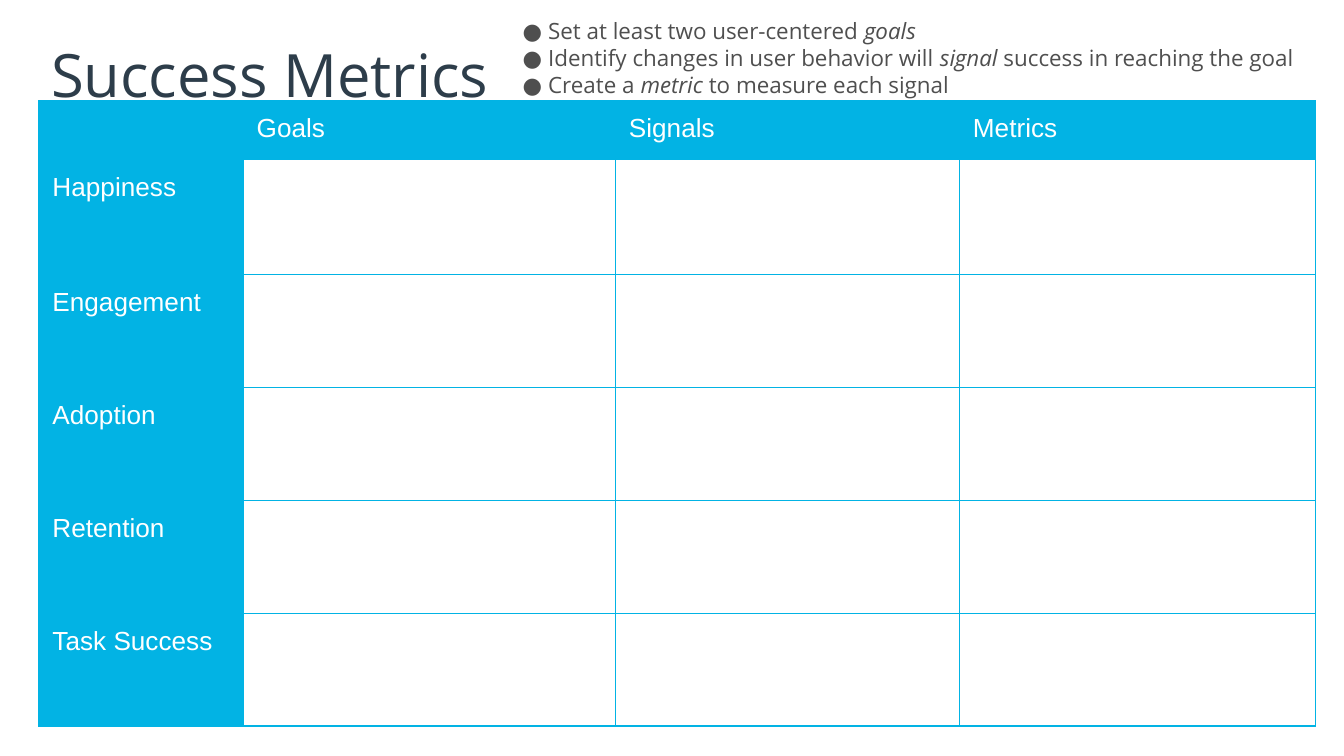
from dataclasses import dataclass

from lxml import etree
from pptx import Presentation
from pptx.dml.color import RGBColor
from pptx.enum import text
from pptx.oxml import ns
from pptx.util import Inches, Pt


@dataclass(frozen=True)
class Theme:
    accent: str = "02B3E4"
    title: str = "2D3D4A"
    body: str = "4F4F4F"
    white: str = "FFFFFF"
    heading_font: str = "Open Sans"
    table_font: str = "Arial"
    title_size: int = 32
    table_size: int = 14
    body_size: int = 12
    border: float = 0.75


THEME = Theme()
COLUMNS = ["", "Goals", "Signals", "Metrics"]
ROWS = ["Happiness", "Engagement", "Adoption", "Retention", "Task Success"]
COLUMN_WIDTHS = [1.52, 2.77, 2.56, 2.65]
ROW_HEIGHTS = [0.42, 0.86] + [0.84] * 4
TIPS = [
    ("Set at least two user-centered ", "goals", ""),
    ("Identify changes in user behavior will ", "signal",
     " success in reaching the goal"),
    ("Create a ", "metric", " to measure each signal"),
]


def set_values(obj, values):
    for name, value in values.items():
        setattr(obj, name, value)


def set_margins(obj, inset):
    sides = ("left", "right", "top", "bottom")
    set_values(obj, {f"margin_{side}": Inches(inset) for side in sides})


def add_run(p, words, font, size, color, italic=False):
    r = p.add_run()
    r.text = words
    set_values(r.font, {"name": font, "size": Pt(size), "italic": italic})
    r.font.color.rgb = RGBColor.from_string(color)


def add_textbox(s, box, inset, anchor):
    tf = s.shapes.add_textbox(*map(Inches, box)).text_frame
    set_values(tf, {"word_wrap": True, "vertical_anchor": anchor})
    set_margins(tf, inset)
    return tf


def add_child(parent, tag, **attrs):
    return etree.SubElement(parent, ns.qn(tag), attrs)


def add_bullet(p):
    pPr = p._p.get_or_add_pPr()
    pPr.set("marL", str(Inches(0.19)))
    pPr.set("indent", str(Inches(-0.21)))
    color = add_child(pPr, "a:buClr")
    add_child(color, "a:srgbClr", val=THEME.body)
    add_child(pPr, "a:buSzPts", val=str(THEME.body_size * 100))
    add_child(pPr, "a:buFont", typeface=THEME.heading_font)
    add_child(pPr, "a:buChar", char="●")


def add_title(s):
    tf = add_textbox(s, (0.34, 0.23, 3.35, 0.63), 0.04, text.MSO_ANCHOR.MIDDLE)
    add_run(tf.paragraphs[0], "Success Metrics", THEME.heading_font,
            THEME.title_size, THEME.title)


def add_tips(s):
    tf = add_textbox(s, (3.79, 0.03, 6.17, 0.73), 0.1, text.MSO_ANCHOR.TOP)
    for i, parts in enumerate(TIPS):
        p = tf.add_paragraph() if i else tf.paragraphs[0]
        add_bullet(p)
        for j, words in enumerate(parts):
            if words:
                add_run(p, words, THEME.heading_font, THEME.body_size,
                        THEME.body, italic=j == 1)


def add_borders(cell):
    tcPr = cell._tc.get_or_add_tcPr()
    for side in ("L", "R", "T", "B"):
        line = add_child(tcPr, f"a:ln{side}", w=str(Pt(THEME.border)))
        fill = add_child(line, "a:solidFill")
        add_child(fill, "a:srgbClr", val=THEME.accent)


def format_cell(cell, label, is_header):
    add_borders(cell)
    if is_header:
        cell.fill.solid()
        cell.fill.fore_color.rgb = RGBColor.from_string(THEME.accent)
    else:
        cell.fill.background()
    if label:
        set_margins(cell, 0.1)
        add_run(cell.text_frame.paragraphs[0], label, THEME.table_font,
                THEME.table_size, THEME.white)


def add_metrics_table(s):
    box = (0.29, 0.75, sum(COLUMN_WIDTHS), sum(ROW_HEIGHTS))
    table = s.shapes.add_table(len(ROW_HEIGHTS), len(COLUMN_WIDTHS),
                               *map(Inches, box)).table
    set_values(table, {"first_row": False, "horz_banding": False})
    for column, width in zip(table.columns, COLUMN_WIDTHS):
        column.width = Inches(width)
    for row, height in zip(table.rows, ROW_HEIGHTS):
        row.height = Inches(height)
    labels = [COLUMNS] + [[name, "", "", ""] for name in ROWS]
    for i, row in enumerate(labels):
        for j, label in enumerate(row):
            format_cell(table.cell(i, j), label, i == 0 or j == 0)


def main():
    prs = Presentation()
    width = Inches(10)
    set_values(prs, {"slide_width": width, "slide_height": width * 9 // 16})
    s = prs.slides.add_slide(prs.slide_layouts[6])
    add_title(s)
    add_metrics_table(s)
    add_tips(s)
    prs.save("out.pptx")


if __name__ == "__main__":
    main()
